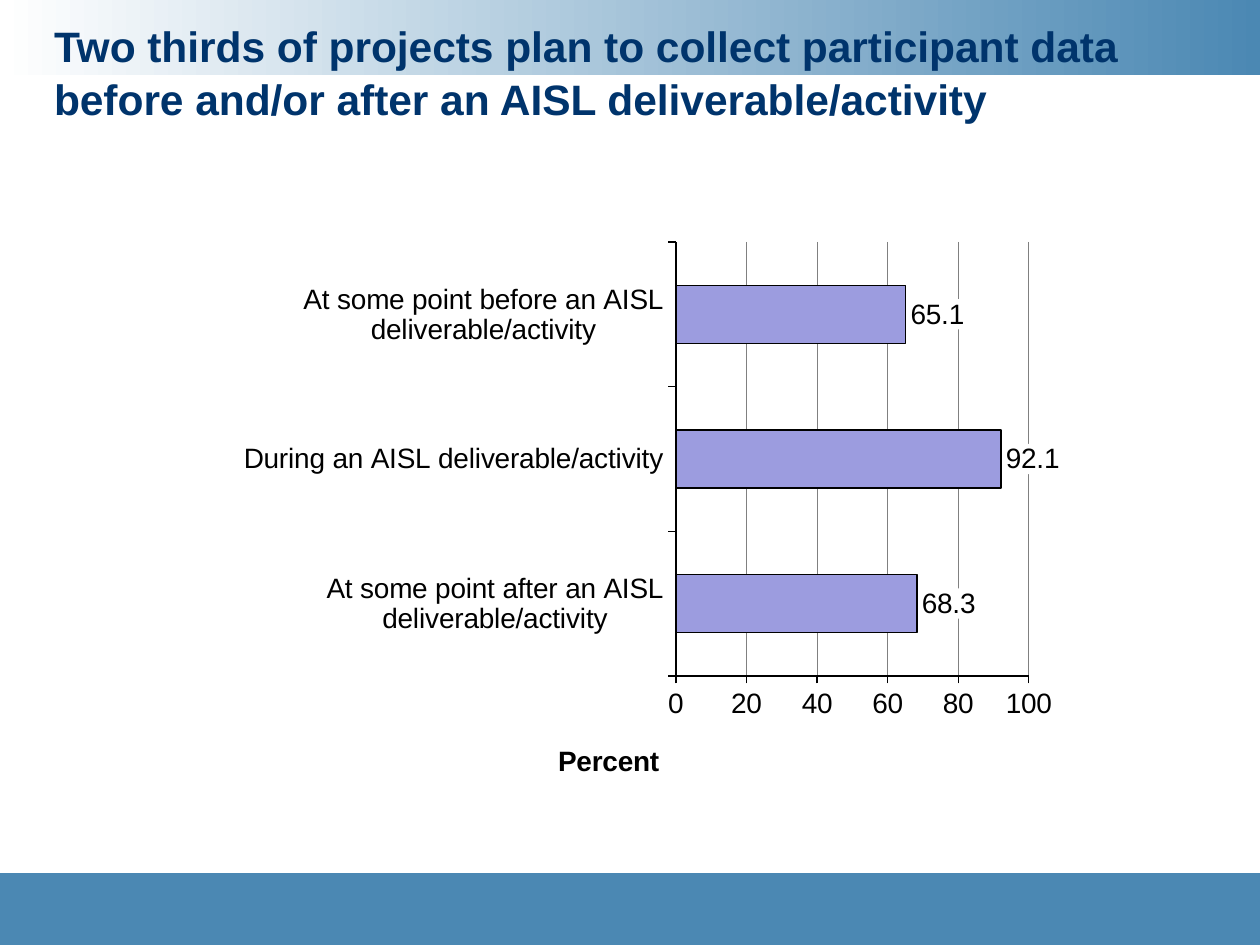
from typing import NamedTuple

from lxml import etree
from pptx import Presentation
from pptx.chart.data import CategoryChartData
from pptx.dml.color import RGBColor
from pptx.enum.chart import XL_CHART_TYPE, XL_LABEL_POSITION, XL_TICK_MARK
from pptx.enum.shapes import MSO_SHAPE
from pptx.enum.text import MSO_ANCHOR, MSO_AUTO_SIZE, PP_ALIGN
from pptx.oxml.ns import qn
from pptx.util import Emu, Pt

PX = 914400 / 126
FONT = "Arial"
COLORS = {
    "white": "FFFFFF",
    "blue": "4B88B3",
    "title": "00346C",
    "bar": "9C9CDF",
    "black": "000000",
    "grid": "808080",
}
RECTANGLE = MSO_SHAPE.RECTANGLE
BAR_CLUSTERED = XL_CHART_TYPE.BAR_CLUSTERED
OUTSIDE_END = XL_LABEL_POSITION.OUTSIDE_END
TICK_OUTSIDE = XL_TICK_MARK.OUTSIDE
TITLE_ONLY = 5

TITLE = ("Two thirds of projects plan to collect participant data "
         "before and/or after an AISL deliverable/activity")
PERCENT_BY_TIMING = {
    "At some point after an AISL deliverable/activity": 68.3,
    "During an AISL deliverable/activity": 92.1,
    "At some point before an AISL deliverable/activity": 65.1,
}


class Box(NamedTuple):
    left: int
    top: int
    width: int
    height: int

    def emu(self) -> list[Emu]:
        return [px(length) for length in self]


class Band(NamedTuple):
    box: Box
    fades_in: bool


BANDS = [
    Band(Box(0, 0, 1260, 75), fades_in=True),
    Band(Box(0, 873, 1260, 72), fades_in=False),
]
TITLE_BOX = Box(42, 10, 1176, 92)
CHART_BOX = Box(136, 231, 935, 567)
PLOT_BOX = Box(676, 242, 353, 434)
AXIS_TITLE_BOX = Box(553, 738, 0, 0)


def px(length: int) -> Emu:
    return Emu(round(length * PX))


def color(name: str) -> RGBColor:
    return RGBColor.from_string(COLORS[name])


def style_font(font, size: float, fill: str = "black", bold: bool = False) -> None:
    font.name = FONT
    font.size = Pt(size)
    font.bold = bold
    font.color.rgb = color(fill)


def write(frame, text: str, *, size: float, fill: str = "black",
          bold: bool = False, align=None, spacing: float | None = None) -> None:
    frame.text = text
    paragraph = frame.paragraphs[0]
    paragraph.alignment = align
    paragraph.line_spacing = spacing
    style_font(paragraph.runs[0].font, size, fill, bold)


def draw_line(line, name: str, width: float = 0.75) -> None:
    line.color.rgb = color(name)
    line.width = Pt(width)


def add_band(slide, band: Band) -> None:
    shape = slide.shapes.add_shape(RECTANGLE, *band.box.emu())
    shape.shadow.inherit = False
    shape.line.fill.background()
    if band.fades_in:
        shape.fill.gradient()
        shape.fill.gradient_angle = 0
        for stop, position, name in zip(shape.fill.gradient_stops, (0, 1), ("white", "blue")):
            stop.position = position
            stop.color.rgb = color(name)
    else:
        shape.fill.solid()
        shape.fill.fore_color.rgb = color("blue")


def place_title(slide) -> None:
    title = slide.shapes.title
    title.left, title.top, title.width, title.height = TITLE_BOX.emu()
    frame = title.text_frame
    frame.word_wrap = True
    frame.auto_size = MSO_AUTO_SIZE.NONE
    frame.vertical_anchor = MSO_ANCHOR.TOP
    frame.margin_left = frame.margin_right = px(12)
    frame.margin_top = frame.margin_bottom = px(8)
    write(frame, TITLE, size=24.3, fill="title", bold=True,
          align=PP_ALIGN.LEFT, spacing=1.04)
    slide.shapes._spTree.append(title._element)  # in front of the bands


def manual_layout(box: Box, inner: bool = False):
    """Layout element that pins a chart part at a slide position."""
    layout = etree.Element(qn("c:layout"))
    manual = etree.SubElement(layout, qn("c:manualLayout"))
    settings = {"layoutTarget": "inner"} if inner else {}
    settings |= {
        "xMode": "edge",
        "yMode": "edge",
        "x": round((box.left - CHART_BOX.left) / CHART_BOX.width, 4),
        "y": round((box.top - CHART_BOX.top) / CHART_BOX.height, 4),
    }
    if inner:
        settings["w"] = round(box.width / CHART_BOX.width, 4)
        settings["h"] = round(box.height / CHART_BOX.height, 4)
    for tag, value in settings.items():
        etree.SubElement(manual, qn(f"c:{tag}")).set("val", str(value))
    return layout


def replace_layout(parent, layout, position: int) -> None:
    for old in parent.findall(qn("c:layout")):
        parent.remove(old)
    parent.insert(position, layout)


def add_timing_chart(slide) -> None:
    data = CategoryChartData(number_format="General")
    data.categories = list(PERCENT_BY_TIMING)
    data.add_series("Series 1", list(PERCENT_BY_TIMING.values()))
    chart = slide.shapes.add_chart(BAR_CLUSTERED, *CHART_BOX.emu(), data).chart
    chart.has_legend = False
    chart.has_title = False
    style_font(chart.font, 16)

    plot = chart.plots[0]
    plot.gap_width = 150
    plot.vary_by_categories = False
    bars = plot.series[0]
    bars.format.fill.solid()
    bars.format.fill.fore_color.rgb = color("bar")
    draw_line(bars.format.line, "black")

    labels = bars.data_labels
    labels.show_value = True
    labels.position = OUTSIDE_END
    style_font(labels.font, 16)
    label_properties = etree.Element(qn("c:spPr"))
    label_fill = etree.SubElement(label_properties, qn("a:solidFill"))
    etree.SubElement(label_fill, qn("a:srgbClr")).set("val", COLORS["white"])
    labels._element.find(qn("c:txPr")).addprevious(label_properties)

    percent_axis = chart.value_axis
    for axis in (chart.category_axis, percent_axis):
        axis.major_tick_mark = TICK_OUTSIDE
        draw_line(axis.format.line, "black")
        style_font(axis.tick_labels.font, 16)
    percent_axis.minimum_scale = 0
    percent_axis.maximum_scale = 100
    percent_axis.major_unit = 20
    percent_axis.has_major_gridlines = True
    draw_line(percent_axis.major_gridlines.format.line, "grid", 0.5)
    axis_title = percent_axis.axis_title
    write(axis_title.text_frame, "Percent", size=16, bold=True)

    replace_layout(axis_title._element, manual_layout(AXIS_TITLE_BOX), 1)
    plot_area = chart._chartSpace.chart.plotArea
    replace_layout(plot_area, manual_layout(PLOT_BOX, inner=True), 0)


def main() -> None:
    deck = Presentation()
    deck.slide_width, deck.slide_height = px(1260), px(945)
    slide = deck.slides.add_slide(deck.slide_layouts[TITLE_ONLY])
    for band in BANDS:
        add_band(slide, band)
    place_title(slide)
    add_timing_chart(slide)
    deck.save("out.pptx")


if __name__ == "__main__":
    main()
